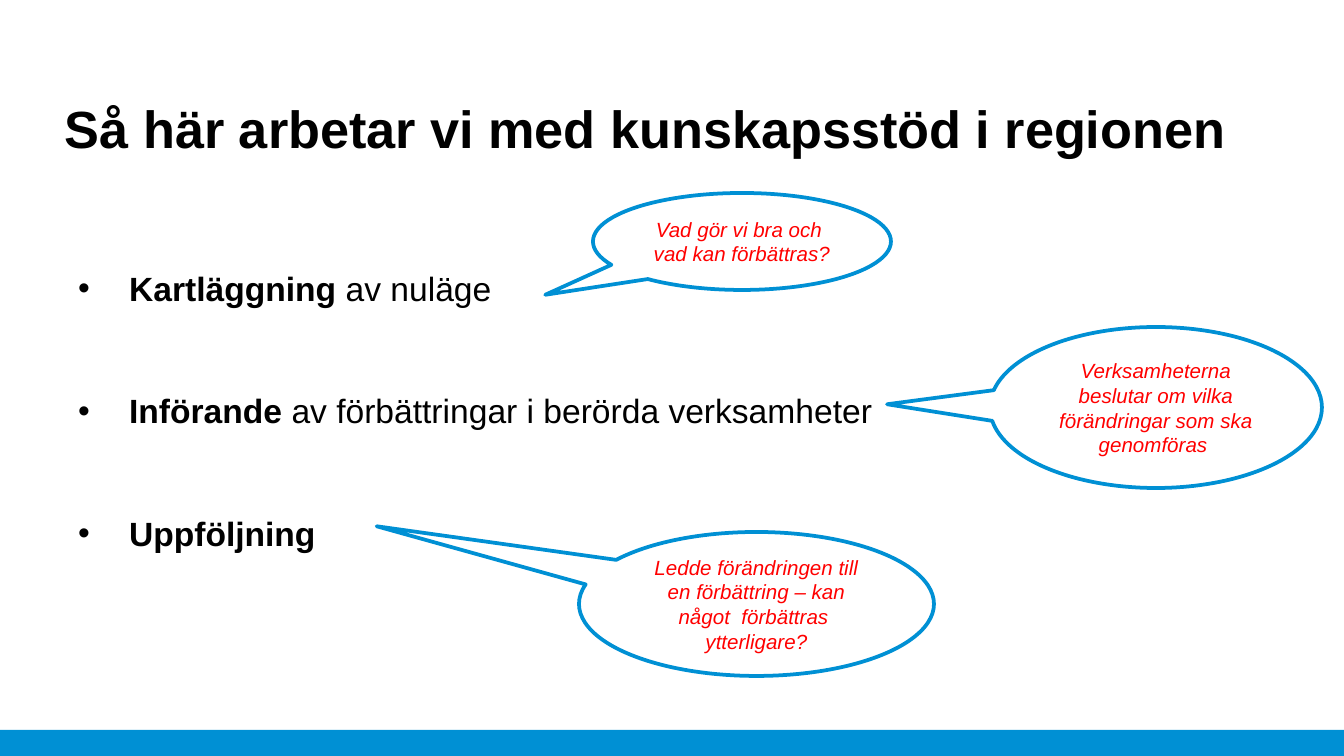
"""Build a slide on how the region works with knowledge support."""
from lxml import etree
from pptx import Presentation, util as u
from pptx.dml.color import RGBColor
from pptx.enum import shapes, text
from pptx.oxml.ns import qn

PX = 914400 / 134.4
THEME = {
    "face": "Arial",
    "blue": RGBColor(0x00, 0x90, 0xD4),
    "red": RGBColor(0xFF, 0x00, 0x00),
    "black": RGBColor(0x00, 0x00, 0x00),
    "white": RGBColor(0xFF, 0xFF, 0xFF),
    "title": 28,
    "body": 18,
    "note": 11,
}


def px(*vals):
    return [u.Emu(round(v * PX)) for v in vals]


def style(para, size, color):
    font = para.font
    font.name, font.size = THEME["face"], u.Pt(THEME[size])
    font.color.rgb = THEME[color]
    return font


deck = Presentation()
deck.slide_width, deck.slide_height = px(1344, 756)
slide = deck.slides.add_slide(deck.slide_layouts[6])
items = slide.shapes

bar = items.add_shape(shapes.MSO_SHAPE.RECTANGLE, *px(0, 730, 1344, 26))
bar.shadow.inherit = False
bar.fill.solid()
bar.fill.fore_color.rgb = THEME["blue"]
bar.line.fill.background()

title = items.add_textbox(*px(65, 85, 1168, 74)).text_frame
title.word_wrap = True
title.vertical_anchor = text.MSO_ANCHOR.BOTTOM
title.margin_left = title.margin_right = title.margin_top = title.margin_bottom = 0
title.text = "Så här arbetar vi med kunskapsstöd i regionen"
style(title.paragraphs[0], "title", "black").bold = True

steps = [
    ("Kartläggning", " av nuläge"),
    ("Införande", " av förbättringar i berörda verksamheter"),
    ("Uppföljning", ""),
]
body = items.add_textbox(*px(65, 258, 841, 298)).text_frame
body.word_wrap = True
body.margin_top = px(10)[0]
indent = px(51)[0]
for i, (key, rest) in enumerate(steps):
    para = body.paragraphs[0] if i == 0 else body.add_paragraph()
    props = para._p.get_or_add_pPr()
    props.set("marL", str(indent))
    props.set("indent", str(-indent))
    etree.SubElement(props, qn("a:buFont")).set("typeface", THEME["face"])
    etree.SubElement(props, qn("a:buChar")).set("char", "•")
    if i:
        para.space_before = u.Pt(44)
    style(para, "body", "black")
    run = para.add_run()
    run.text, run.font.bold = key, True
    if rest:
        para.add_run().text = rest

notes = [
    ((593, 193, 298, 97), (-0.66, 0.55), "Vad gör vi bra och \vvad kan förbättras?"),
    ((990, 327, 332, 161), (-0.81, -0.02),
     "Verksamheterna beslutar om vilka förändringar som ska genomföras "),
    ((579, 532, 355, 144), (-1.07, -0.54),
     "Ledde förändringen till en förbättring – kan något  förbättras  ytterligare?"),
]
for box, tip, words in notes:
    note = items.add_shape(shapes.MSO_SHAPE.OVAL_CALLOUT, *px(*box))
    note.adjustments[0], note.adjustments[1] = tip
    note.shadow.inherit = False
    note.fill.solid()
    note.fill.fore_color.rgb = THEME["white"]
    note.line.color.rgb = THEME["blue"]
    note.line.width = u.Pt(2)
    frame = note.text_frame
    frame.word_wrap = True
    frame.vertical_anchor = text.MSO_ANCHOR.MIDDLE
    frame.text = words
    para = frame.paragraphs[0]
    para.alignment = text.PP_ALIGN.CENTER
    style(para, "note", "red").italic = True

deck.save("out.pptx")
